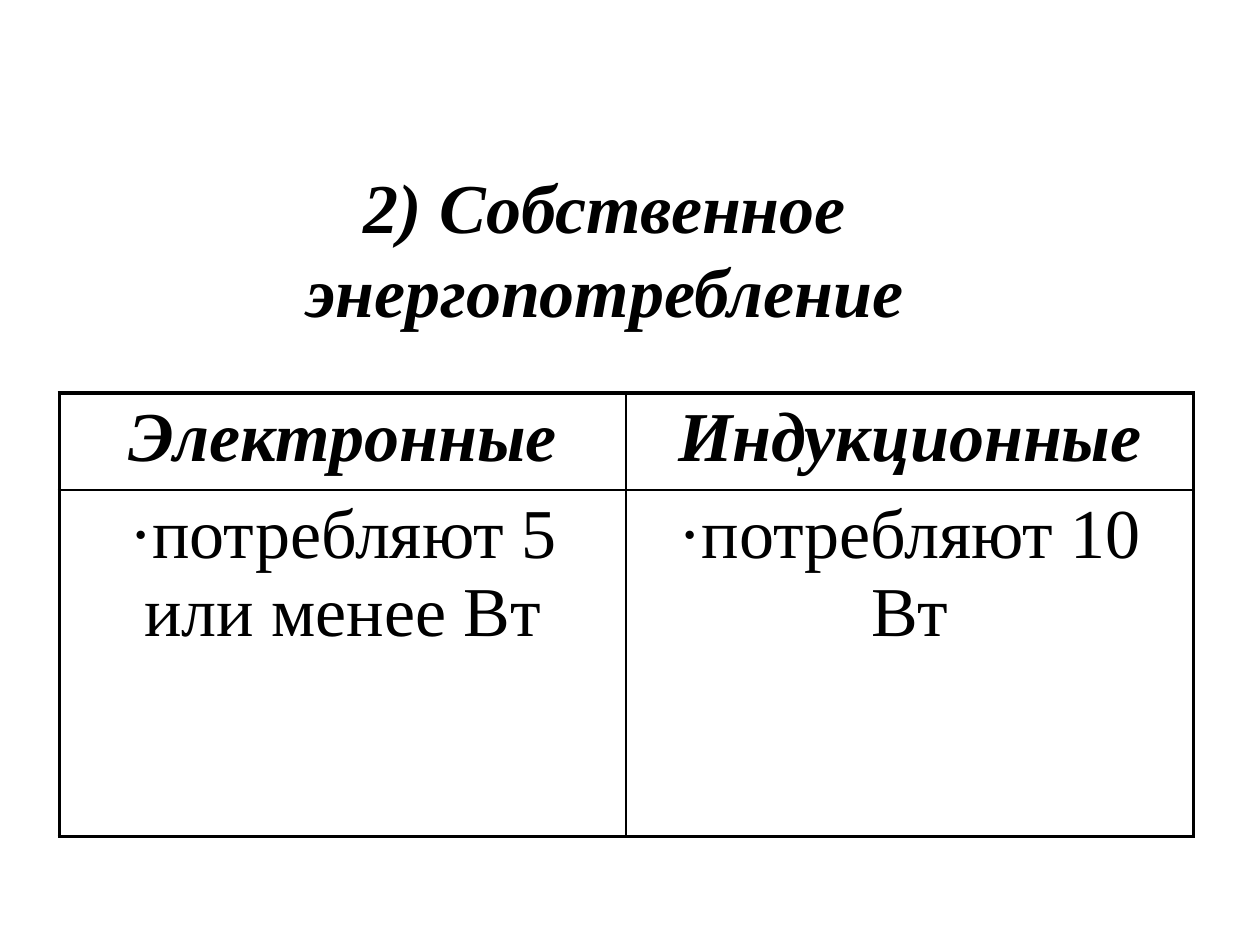
"""Build the slide comparing the power consumption of two kinds of meters."""
import dataclasses

import lxml.etree
import pptx
import pptx.dml.color
import pptx.enum.text
import pptx.oxml.ns
import pptx.table
import pptx.text.text
import pptx.util

Inches = pptx.util.Inches
FONT = "Times New Roman"
BLACK = "000000"
OUTER, INNER = 2.25, 1


@dataclasses.dataclass
class Row:
    height: float
    texts: tuple[str, ...]
    heading: bool


ROWS = (
    Row(0.77, ("Электронные", "Индукционные"), True),
    Row(2.75, ("·потребляют 5 или менее Вт", "·потребляют 10 Вт"), False),
)


def rgb(color: str) -> pptx.dml.color.RGBColor:
    return pptx.dml.color.RGBColor.from_string(color)


def write(tf: pptx.text.text.TextFrame, text: str, emphasis: bool) -> None:
    tf.text = text
    p = tf.paragraphs[0]
    p.alignment = pptx.enum.text.PP_ALIGN.CENTER
    p.space_before = pptx.util.Pt(0)
    font = p.font
    font.name, font.size = FONT, pptx.util.Pt(40)
    font.bold = font.italic = emphasis
    font.color.rgb = rgb(BLACK)


def set_borders(cell: pptx.table._Cell, widths: dict[str, float]) -> None:
    qn = pptx.oxml.ns.qn
    tc_pr = cell._tc.get_or_add_tcPr()
    for side, width in widths.items():
        ln = lxml.etree.SubElement(tc_pr, qn(f"a:ln{side}"), w=str(pptx.util.Pt(width)))
        fill = lxml.etree.SubElement(ln, qn("a:solidFill"))
        lxml.etree.SubElement(fill, qn("a:srgbClr"), val=BLACK)


def add_comparison(s, rows: tuple[Row, ...]) -> None:
    n_rows, n_cols = len(rows), len(rows[0].texts)
    height = sum(row.height for row in rows)
    table = s.shapes.add_table(
        n_rows, n_cols, Inches(0.47), Inches(3.12), Inches(9), Inches(height)
    ).table
    table.first_row = table.horz_banding = False
    for i, row in enumerate(rows):
        table.rows[i].height = Inches(row.height)
        for j, text in enumerate(row.texts):
            cell = table.cell(i, j)
            write(cell.text_frame, text, row.heading)
            edges = {"L": j == 0, "R": j == n_cols - 1, "T": i == 0, "B": i == n_rows - 1}
            set_borders(cell, {side: OUTER if edge else INNER for side, edge in edges.items()})
            cell.fill.background()


def main() -> None:
    prs = pptx.Presentation()
    prs.slide_width, prs.slide_height = Inches(10), Inches(7.5)
    s = prs.slides.add_slide(prs.slide_layouts.get_by_name("Title Only"))
    sp = s.shapes.title
    sp.left, sp.top, sp.width, sp.height = map(Inches, (0.39, 1.25, 8.82, 1.43))
    tf = sp.text_frame
    tf.auto_size = pptx.enum.text.MSO_AUTO_SIZE.SHAPE_TO_FIT_TEXT
    tf.vertical_anchor = pptx.enum.text.MSO_ANCHOR.TOP
    write(tf, "2) Собственное энергопотребление", True)
    add_comparison(s, ROWS)
    prs.save("out.pptx")


if __name__ == "__main__":
    main()
